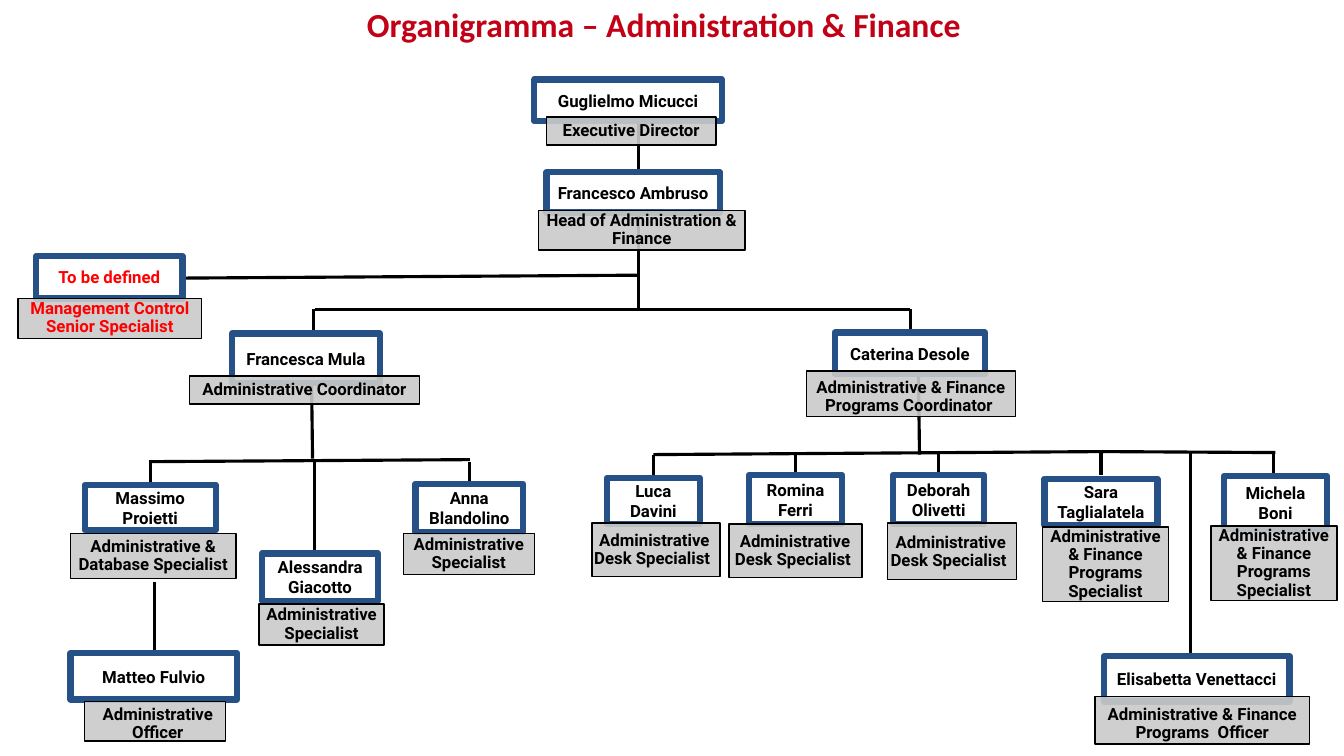
from pptx import Presentation
from pptx.util import Inches, Pt
from pptx.dml.color import RGBColor
from pptx.enum.shapes import MSO_SHAPE as Shape, MSO_CONNECTOR as Link
from pptx.enum.text import PP_ALIGN as Align, MSO_ANCHOR as Anchor
from pptx.oxml import parse_xml
from pptx.oxml.ns import qn
from lxml import etree

BLACK = RGBColor(0, 0, 0)
WHITE = RGBColor(255, 255, 255)
RED = RGBColor(255, 0, 0)
CRIMSON = RGBColor(0xC2, 0x00, 0x16)
BLUE = RGBColor(0x25, 0x51, 0x86)
GREY = RGBColor(0xCA, 0xCA, 0xCA)

DRAWING = "http://schemas.openxmlformats.org/drawingml/2006/main"
GLOW = (f'<a:effectLst xmlns:a="{DRAWING}"><a:outerShdw blurRad="50800" dist="38100" '
        'dir="2700000"><a:srgbClr val="000000"><a:alpha val="40000"/></a:srgbClr>'
        '</a:outerShdw></a:effectLst>')

DESK = "Administrative Desk Specialist "
AIDE = "Administrative Specialist"
PROGRAMS = "Administrative & Finance Programs Specialist"

STAFF = [
    ("Guglielmo Micucci", (5.3, 0.79, 1.86, 0.41),
     "Executive Director", (5.42, 1.16, 1.68, 0.28)),
    ("Francesco Ambruso", (5.42, 1.71, 1.72, 0.4),
     "Head of Administration & Finance", (5.34, 2.09, 2.05, 0.39)),
    ("Francesca Mula", (2.3, 3.31, 1.47, 0.49),
     "Administrative Coordinator", (1.88, 3.73, 2.28, 0.28)),
    ("Caterina Desole", (8.28, 3.3, 1.49, 0.41),
     "Administrative & Finance Programs Coordinator ",
     (8, 3.68, 2.07, 0.45), (7.94, 3.69, 2.19, 0.49)),
    ("Massimo Proietti", (0.84, 4.81, 1.3, 0.45),
     "Administrative & Database Specialist", (0.7, 5.29, 1.64, 0.45)),
    ("Alessandra Giacotto", (2.6, 5.49, 1.15, 0.47), AIDE, (2.57, 5.99, 1.24, 0.41)),
    ("Anna Blandolino", (4.12, 4.8, 1.07, 0.48), AIDE, (4, 5.29, 1.3, 0.41)),
    ("Matteo Fulvio", (0.7, 6.48, 1.65, 0.46),
     "Administrative Officer", (0.84, 6.96, 1.4, 0.39), (0.84, 6.99, 1.45, 0.39)),
    ("Luca Davini", (6.02, 4.74, 0.92, 0.46),
     DESK, (5.87, 5.19, 1.27, 0.53), (5.84, 5.32, 1.3, 0.28)),
    ("Romina Ferri", (7.43, 4.71, 0.92, 0.49),
     DESK, (7.23, 5.2, 1.32, 0.53), (7.21, 5.33, 1.35, 0.28)),
    ("Deborah Olivetti", (8.86, 4.71, 0.9, 0.49),
     DESK, (8.8, 5.19, 1.28, 0.56), (8.78, 5.33, 1.3, 0.29)),
    ("Sara Taglialatela", (10.36, 4.75, 1.12, 0.46), PROGRAMS, (10.34, 5.23, 1.25, 0.74)),
    ("Michela Boni", (12.14, 4.72, 1.02, 0.53), PROGRAMS, (12.01, 5.22, 1.25, 0.74)),
    ("Elisabetta Venettacci", (10.95, 6.51, 1.84, 0.45),
     "Administrative & Finance Programs  Officer",
     (10.86, 6.91, 2.13, 0.47), (10.86, 7.01, 2.13, 0.34)),
]
VACANT = ("To be defined", (0.36, 2.54, 1.45, 0.42),
          "Management Control Senior Specialist", (0.18, 2.96, 1.82, 0.4))

DROPS = [
    (6.33, 1.2, 2.36), (6.33, 2.29, 3.08), (3.11, 3.07, 3.32), (9.03, 3.07, 3.32),
    (1.49, 4.56, 4.81), (3.12, 4.56, 5.75), (4.66, 4.58, 4.83), (1.53, 5.77, 6.48),
    (6.48, 4.51, 4.76), (7.89, 4.51, 4.75), (9.31, 4.48, 4.7), (10.92, 4.48, 4.71),
    (11.81, 4.49, 6.74), (12.63, 4.49, 4.72),
]
SPANS = [
    (1.67, 2.76, 6.33, 2.73), (3.12, 3.07, 9.03, 3.07), (3.09, 3.76, 3.1, 4.55),
    (1.49, 4.58, 4.66, 4.56), (9.11, 3.73, 9.12, 4.51), (6.48, 4.51, 10.95, 4.48),
    (10.92, 4.48, 12.65, 4.49),
]


def inches(place):
    return [Inches(n) for n in place]


def write(shape, text, size=12, font="Roboto", color=BLACK, align=Align.CENTER,
          space=1.0, pad=(0.1, 0.05)):
    frame = shape.text_frame
    frame.word_wrap = True
    frame.vertical_anchor = Anchor.MIDDLE
    frame.margin_left = frame.margin_right = Inches(pad[0])
    frame.margin_top = frame.margin_bottom = Inches(pad[1])
    para = frame.paragraphs[0]
    para.alignment = align
    para.line_spacing = space
    run = para.add_run()
    run.text = text
    run.font.size = Pt(size)
    run.font.name = font
    run.font.bold = True
    run.font.color.rgb = color
    return run


def wire(shapes, x1, y1, x2, y2):
    line = shapes.add_connector(Link.STRAIGHT, *inches((x1, y1, x2, y2)))
    line.line.color.rgb = BLACK
    line.line.width = Pt(2.25)
    etree.SubElement(line._element.spPr, qn("a:effectLst"))


def panel(shapes, place, fill, edge, width):
    box = shapes.add_shape(Shape.RECTANGLE, *inches(place))
    box.shadow.inherit = False
    box.fill.solid()
    box.fill.fore_color.rgb = fill
    box.line.color.rgb = edge
    box.line.width = Pt(width)
    return box


def fade(box, percent):
    tint = box._element.spPr.find(qn("a:solidFill")).find(qn("a:srgbClr"))
    etree.SubElement(tint, qn("a:alpha")).set("val", str(percent * 1000))


def post(shapes, name, place, role, plate, label=None, color=BLACK):
    write(panel(shapes, place, WHITE, BLUE, 4.5), name, color=color)
    group = shapes.add_group_shape().shapes
    fade(panel(group, plate, GREY, BLACK, 1), 90)
    text = group.add_textbox(*inches(label or plate))
    write(text, role, color=color, space=0.9, pad=(0.03, 0.01))


def title(shapes, text):
    box = shapes.add_textbox(*inches((3.54, 0.01, 6.38, 0.5)))
    run = write(box, text, size=24, font="Calibri", color=CRIMSON,
                align=Align.LEFT, space=0.9)
    run.font._element.find(qn("a:solidFill")).addnext(parse_xml(GLOW))


def main():
    deck = Presentation()
    deck.slide_width = Inches(13.33)
    deck.slide_height = Inches(7.5)
    shapes = deck.slides.add_slide(deck.slide_layouts[6]).shapes
    title(shapes, "Organigramma – Administration & Finance")
    for x, top, end in DROPS:
        wire(shapes, x, top, x, end)
    for span in SPANS:
        wire(shapes, *span)
    for entry in STAFF:
        post(shapes, *entry)
    post(shapes, *VACANT, color=RED)
    deck.save("out.pptx")


if __name__ == "__main__":
    main()
